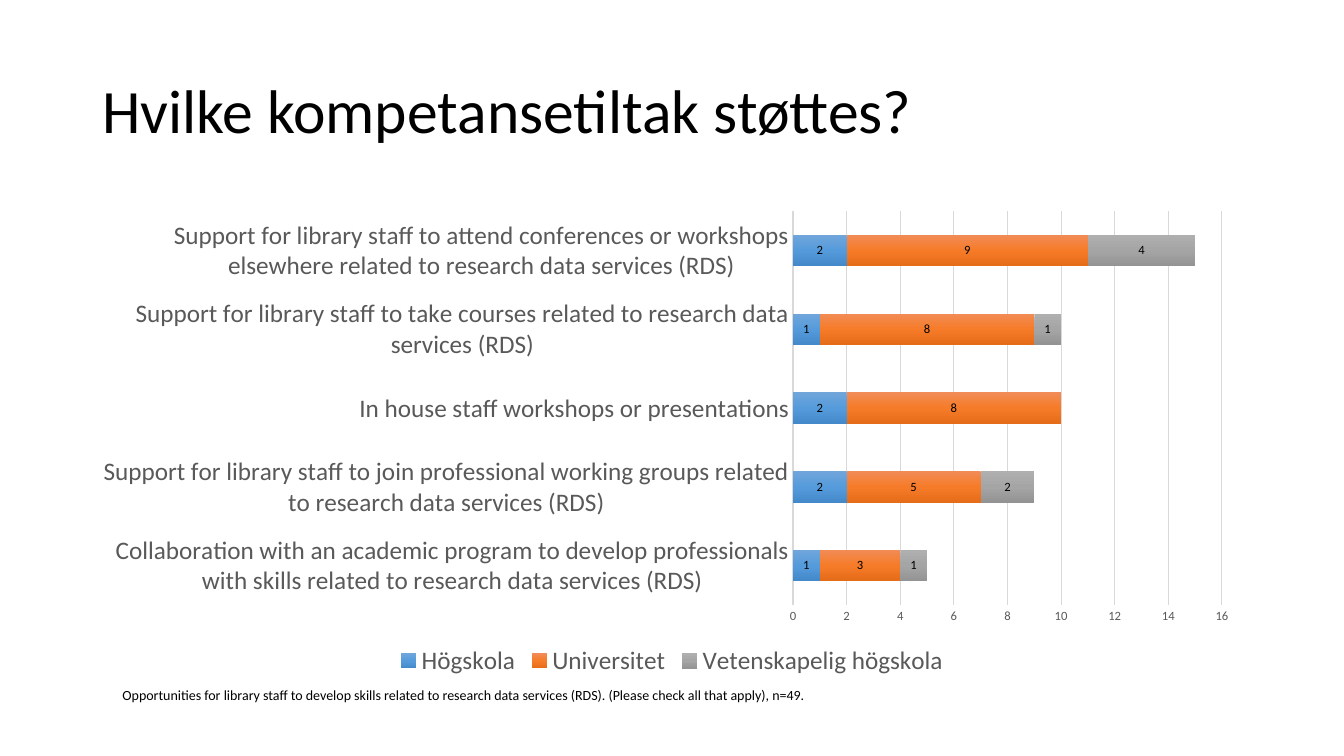
from copy import deepcopy

from lxml import etree
from pptx import Presentation, util as u
from pptx.chart.data import CategoryChartData
from pptx.dml.color import RGBColor
from pptx.enum import chart as ch, text

COLUMNS, ROWS = 160, 90
MARGIN, CONTENT = 11, 138
BLACK, GREY, PALE = "000000", "595959", "D9D9D9"

CATEGORIES = [
    "Collaboration with an academic program to develop professionals with skills "
    "related to research data services (RDS)",
    "Support for library staff to join professional working groups related to "
    "research data services (RDS)",
    "In house staff workshops or presentations",
    "Support for library staff to take courses related to research data services (RDS)",
    "Support for library staff to attend conferences or workshops elsewhere related "
    "to research data services (RDS)",
]
SERIES = [
    ("Högskola", (1, 2, 2, 1, 2), ("71A6DB", "559BDB", "448ACA")),
    ("Universitet", (3, 5, 8, 8, 9), ("F18C57", "F67B28", "E56C19")),
    ("Vetenskapelig högskola", (1, 2, None, 1, 4), ("AFAFAF", "A5A5A5", "939393")),
]


def rgb(value):
    return RGBColor.from_string(value)


class Deck:
    font_name = "Calibri"

    def __init__(self):
        self.prs = Presentation()
        self.prs.slide_width = u.Inches(13.33)
        self.prs.slide_height = u.Inches(7.5)
        self.slide = self.prs.slides.add_slide(self.prs.slide_layouts[6])

    def box(self, col, row, cols, rows):
        """Turn grid columns and rows into left, top, width and height."""
        x, y = self.prs.slide_width / COLUMNS, self.prs.slide_height / ROWS
        return [round(n) for n in (col * x, row * y, cols * x, rows * y)]

    def style(self, font, size, color):
        font.name, font.size = self.font_name, u.Pt(size)
        font.color.rgb = rgb(color)

    def text(self, words, place, size, anchor=text.MSO_ANCHOR.TOP, spacing=1.0, indent=0):
        tf = self.slide.shapes.add_textbox(*self.box(*place)).text_frame
        tf.word_wrap, tf.vertical_anchor = True, anchor
        tf.text = words
        p = tf.paragraphs[0]
        p.line_spacing = spacing
        if indent:
            p._p.get_or_add_pPr().set("indent", str(u.Inches(indent)))
        self.style(p.runs[0].font, size, BLACK)

    def gradient(self, series, colors):
        """Fill a series from top to bottom with evenly spaced colours."""
        fill = series.format.fill
        fill.gradient()
        fill.gradient_angle = 270
        stops = series._element.xpath("c:spPr/a:gradFill/a:gsLst")[0]
        for _ in colors[2:]:
            stops.append(deepcopy(stops[0]))
        for i, (stop, color) in enumerate(zip(fill.gradient_stops, colors)):
            stop.color.rgb = rgb(color)
            stop.position = i / (len(colors) - 1)

    def axis(self, axis, size):
        axis.major_tick_mark = axis.minor_tick_mark = ch.XL_TICK_MARK.NONE
        self.style(axis.tick_labels.font, size, GREY)

    def stacked_bars(self, categories, series, place):
        data = CategoryChartData()
        data.categories = categories
        for name, values, _ in series:
            data.add_series(name, values)
        chart = self.slide.shapes.add_chart(
            ch.XL_CHART_TYPE.BAR_STACKED, *self.box(*place), data).chart
        self.style(chart.font, 10, BLACK)
        chart.has_title = False

        chart.has_legend = True
        chart.legend.position = ch.XL_LEGEND_POSITION.BOTTOM
        chart.legend.include_in_layout = False
        self.style(chart.legend.font, 18, GREY)

        category, value = chart.category_axis, chart.value_axis
        self.axis(category, 18)
        self.axis(value, 9)
        value.format.line.fill.background()
        value.has_major_gridlines = True
        for line, width in ((category.format.line, 1),
                            (value.major_gridlines.format.line, 0.75)):
            line.color.rgb, line.width = rgb(PALE), u.Pt(width)

        plot = chart.plots[0]
        plot.gap_width, plot.overlap, plot.vary_by_categories = 150, 100, False
        for bars, (_, _, colors) in zip(plot.series, series):
            self.gradient(bars, colors)
            labels = bars.data_labels
            labels.show_value = True
            labels.position = ch.XL_LABEL_POSITION.CENTER
            self.style(labels.font, 9, BLACK)


def main():
    deck = Deck()
    deck.text("Hvilke kompetansetiltak støttes?", (MARGIN, 4.8, CONTENT, 17.4), 44,
              anchor=text.MSO_ANCHOR.MIDDLE, spacing=0.9)
    deck.stacked_bars(CATEGORIES, SERIES, (MARGIN, 24, CONTENT, 57.1))
    deck.text("Opportunities for library staff to develop skills related to research data "
              "services (RDS). (Please check all that apply), n=49.",
              (MARGIN, 81.1, 132.4, 3.2), 10, indent=0.2)
    deck.prs.save("out.pptx")


if __name__ == "__main__":
    main()
